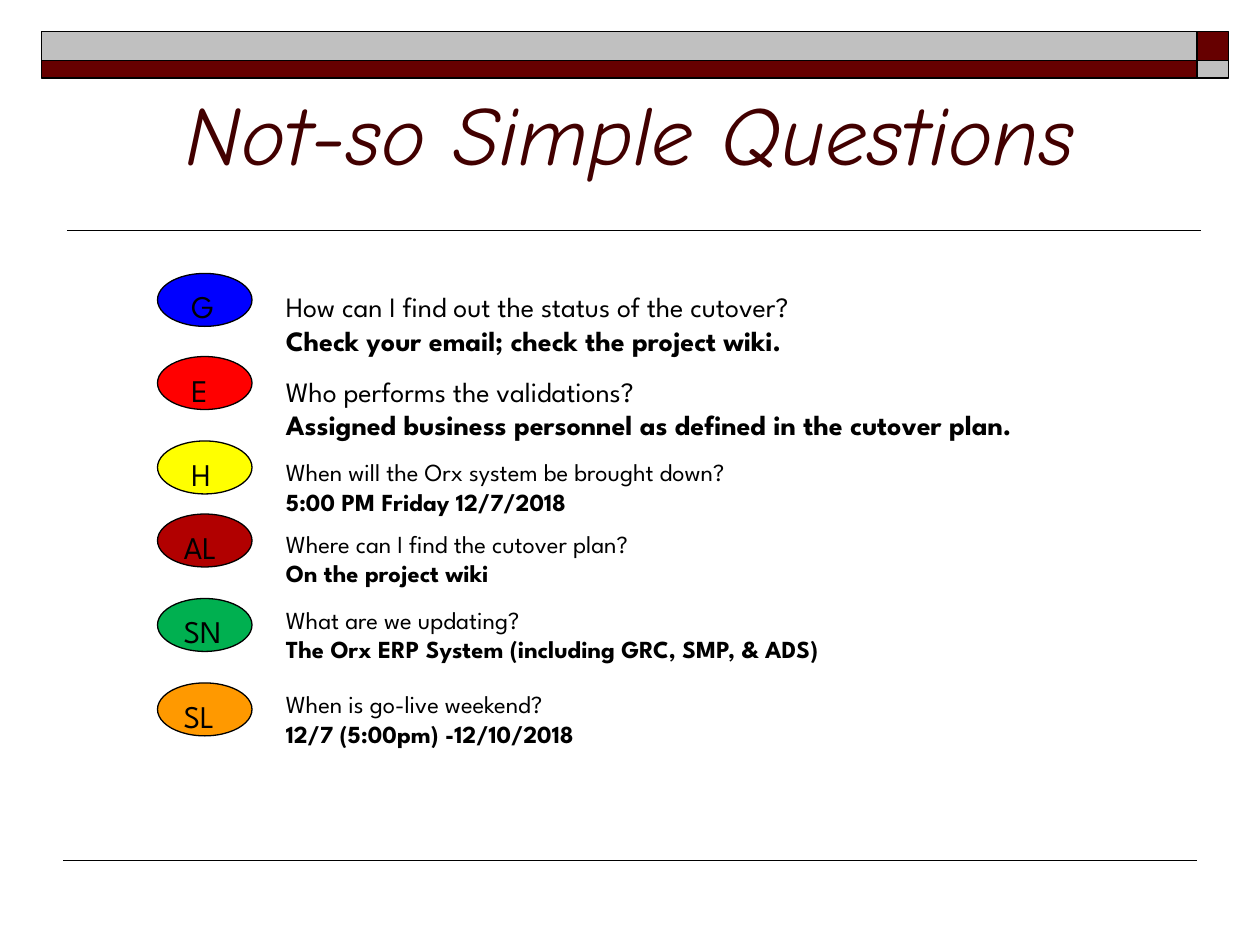
from pptx import Presentation
from pptx.dml.color import RGBColor
from pptx.enum.shapes import MSO_CONNECTOR, MSO_SHAPE
from pptx.enum.text import MSO_ANCHOR, PP_ALIGN
from pptx.oxml.ns import qn
from pptx.util import Inches, Pt
from lxml import etree

LEFT, CENTER = PP_ALIGN.LEFT, PP_ALIGN.CENTER
TOP, BOTTOM = MSO_ANCHOR.TOP, MSO_ANCHOR.BOTTOM
OVAL, RECTANGLE = MSO_SHAPE.OVAL, MSO_SHAPE.RECTANGLE
STRAIGHT = MSO_CONNECTOR.STRAIGHT

# Content
TITLE = "Not-so Simple Questions"
# letter, badge colour, badge top, question, answer, text top, text width, size name
QUESTIONS = [
    ("G", "0000FF", 2.17, "How can I find out the status of the cutover?",
     "Check your email; check the project wiki.", 2.25, 6.17, "large"),
    ("E", "FF0000", 2.83, "Who performs the validations?",
     "Assigned business personnel as defined in the cutover plan.", 2.92, 7.33, "large"),
    ("H", "FFFF00", 3.5, "When will the Orx system be brought down?",
     "5:00 PM Friday 12/7/2018", 3.58, 5.17, "small"),
    ("AL", "B10000", 4.08, "Where can I find the cutover plan?",
     "On the project wiki", 4.15, 7.08, "small"),
    ("SN", "00B050", 4.75, "What are we updating?",
     "The Orx ERP System (including GRC, SMP, & ADS)", 4.75, 6.5, "small"),
    ("SL", "FF9900", 5.42, "When is go-live weekend?",
     "12/7 (5:00pm) -12/10/2018", 5.42, 7.17, "small"),
]

THEME = {
    "title_font": "Comic Neue", "body_font": "League Spartan",
    "title": "420000", "ink": "000000", "maroon": "660000", "silver": "C0C0C0",
    "title_size": 48, "badge_size": 18, "large": 16, "small": 14,
}
TEXT_HEIGHT = {"large": 0.64, "small": 0.57}

# Layout, in inches
BADGE_LEFT, BADGE_WIDTH, BADGE_HEIGHT = 1.25, 0.75, 0.42
TEXT_LEFT = 2.17
BAND_COLUMNS = [(0.33, 9.17), (9.5, 0.25)]
BAND_ROWS = [(0.25, 0.23), (0.48, 0.14)]
RULES = [(0.53, 9.53, 1.83, 1), (0.5, 9.5, 6.83, 0.75)]


def write_text(shape, lines, font=THEME["body_font"], size=18, color=THEME["ink"],
               italic=False, align=LEFT, anchor=TOP, inset=0.1):
    """Write (text, bold) lines into a shape, one paragraph each."""
    frame = shape.text_frame
    frame.word_wrap = True
    frame.vertical_anchor = anchor
    frame.margin_left = Inches(inset)
    for index, (text, bold) in enumerate(lines):
        paragraph = frame.paragraphs[0] if index == 0 else frame.add_paragraph()
        paragraph.alignment = align
        run = paragraph.add_run()
        run.text = text
        run.font.name = font
        run.font.size = Pt(size)
        run.font.bold = bold
        run.font.italic = italic
        run.font.color.rgb = RGBColor.from_string(color)


def add_filled(slide, kind, box, fill, line_width):
    shape = slide.shapes.add_shape(kind, *map(Inches, box))
    shape.shadow.inherit = False
    shape.fill.solid()
    shape.fill.fore_color.rgb = RGBColor.from_string(fill)
    shape.line.color.rgb = RGBColor.from_string(THEME["ink"])
    shape.line.width = Pt(line_width)
    return shape


def add_rule(slide, left, right, top, width):
    rule = slide.shapes.add_connector(
        STRAIGHT, Inches(left), Inches(top), Inches(right), Inches(top))
    rule.line.color.rgb = RGBColor.from_string(THEME["ink"])
    rule.line.width = Pt(width)
    etree.SubElement(rule._element.spPr, qn("a:effectLst"))


def add_text_box(slide, box):
    return slide.shapes.add_textbox(*map(Inches, box))


def main():
    presentation = Presentation()
    presentation.slide_width, presentation.slide_height = Inches(10), Inches(7.5)
    slide = presentation.slides.add_slide(presentation.slide_layouts[6])

    # Header band: colours alternate like a checkerboard
    for row, (top, height) in enumerate(BAND_ROWS):
        for column, (left, width) in enumerate(BAND_COLUMNS):
            fill = THEME["maroon" if (row + column) % 2 else "silver"]
            add_filled(slide, RECTANGLE, (left, top, width, height), fill, 1)

    # Rules and title
    for rule in RULES:
        add_rule(slide, *rule)
    write_text(add_text_box(slide, (0.5, 0.25, 9, 1.25)), [(TITLE, False)],
               font=THEME["title_font"], size=THEME["title_size"],
               color=THEME["title"], italic=True, align=CENTER, anchor=BOTTOM)

    # Questions with lettered badges
    for letter, color, badge_top, question, answer, top, width, size in QUESTIONS:
        badge = add_filled(
            slide, OVAL, (BADGE_LEFT, badge_top, BADGE_WIDTH, BADGE_HEIGHT), color, 0.75)
        write_text(badge, [(letter, False)], size=THEME["badge_size"],
                   inset=0.16 if len(letter) == 1 else 0.1)
        text_box = add_text_box(slide, (TEXT_LEFT, top, width, TEXT_HEIGHT[size]))
        write_text(text_box, [(question, False), (answer, True)], size=THEME[size])

    presentation.save("out.pptx")


if __name__ == "__main__":
    main()
